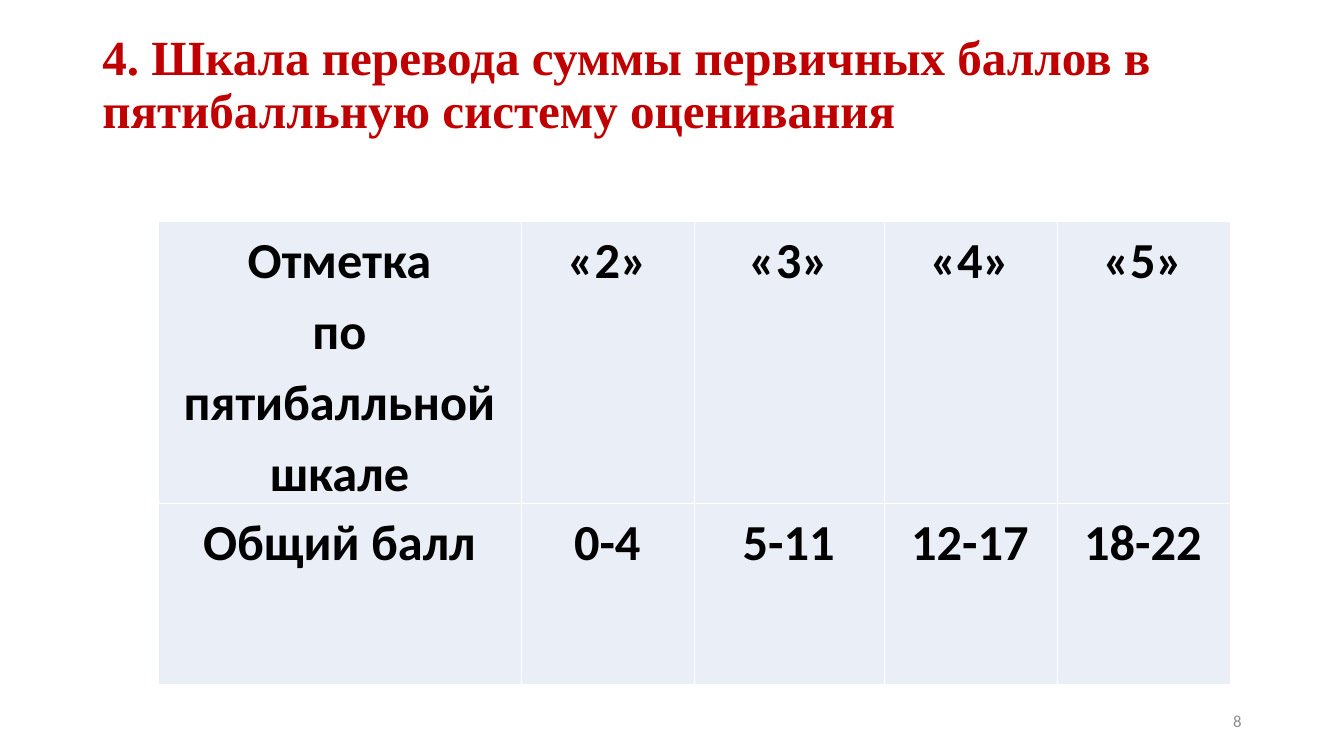
from pptx import Presentation
from pptx.dml.color import RGBColor
from pptx.enum.text import MSO_ANCHOR, PP_ALIGN
from pptx.oxml import parse_xml
from pptx.oxml.ns import nsdecls
from pptx.util import Cm, Pt

RED = RGBColor(0xC0, 0x00, 0x00)
BLACK = RGBColor(0x00, 0x00, 0x00)
GRAY = RGBColor(0x8C, 0x8C, 0x8C)
PALE_BLUE = RGBColor(0xEA, 0xEF, 0xF7)
WHITE = RGBColor(0xFF, 0xFF, 0xFF)

COLUMN_WIDTHS = (9.14, 4.36, 4.78, 4.36, 4.36)
ROW_HEIGHTS = (7.11, 4.57)
SCALE = (
    ("Отметка\nпо пятибалльной шкале", "«2»", "«3»", "«4»", "«5»"),
    ("Общий балл", "0-4", "5-11", "12-17", "18-22"),
)


def write(tf, text, size, color, font="Calibri", bold=False,
          align=PP_ALIGN.LEFT, spacing=1.0):
    """Fill a text frame, one paragraph per line of text."""
    tf.word_wrap = True
    for i, line in enumerate(text.split("\n")):
        p = tf.paragraphs[0] if i == 0 else tf.add_paragraph()
        p.alignment = align
        p.line_spacing = spacing
        r = p.add_run()
        r.text = line
        r.font.name = font
        r.font.size = Pt(size)
        r.font.bold = bold
        r.font.color.rgb = color


def add_text(s, box, text, size, color, bottom_inset=0.13, **fmt):
    tf = s.shapes.add_textbox(*map(Cm, box)).text_frame
    tf.vertical_anchor = MSO_ANCHOR.MIDDLE
    tf.margin_bottom = Cm(bottom_inset)
    write(tf, text, size, color, **fmt)


def add_borders(cell, color, width):
    tcPr = cell._tc.get_or_add_tcPr()
    for i, side in enumerate(("lnL", "lnR", "lnT", "lnB")):
        tcPr.insert(i, parse_xml(
            f'<a:{side} {nsdecls("a")} w="{Pt(width)}"><a:solidFill>'
            f'<a:srgbClr val="{color}"/></a:solidFill></a:{side}>'))


def add_scale_table(s, left, top):
    table = s.shapes.add_table(
        len(SCALE), len(COLUMN_WIDTHS), Cm(left), Cm(top),
        Cm(sum(COLUMN_WIDTHS)), Cm(sum(ROW_HEIGHTS))).table
    table.first_row = table.horz_banding = False
    for column, width in zip(table.columns, COLUMN_WIDTHS):
        column.width = Cm(width)
    for row, height, texts in zip(table.rows, ROW_HEIGHTS, SCALE):
        row.height = Cm(height)
        for cell, text in zip(row.cells, texts):
            cell.margin_left, cell.margin_right = Cm(0.05), Cm(0.08)
            cell.margin_top = cell.margin_bottom = 0
            cell.fill.solid()
            cell.fill.fore_color.rgb = PALE_BLUE
            add_borders(cell, WHITE, 1)
            write(cell.text_frame, text, 36, BLACK, bold=True,
                  align=PP_ALIGN.CENTER, spacing=1.15)


def main():
    prs = Presentation()
    prs.slide_width, prs.slide_height = Cm(33.87), Cm(19.05)
    s = prs.slides.add_slide(prs.slide_layouts[6])
    add_text(s, (2.33, 1.01, 29.21, 3.68),
             "4. Шкала перевода суммы первичных баллов в пятибалльную систему оценивания",
             35.1, RED, bottom_inset=1.47, font="Times New Roman", bold=True, spacing=0.9)
    add_scale_table(s, 4, 5.57)
    add_text(s, (23.92, 17.66, 7.62, 1.01), "8", 12, GRAY, align=PP_ALIGN.RIGHT)
    prs.save("out.pptx")


if __name__ == "__main__":
    main()
